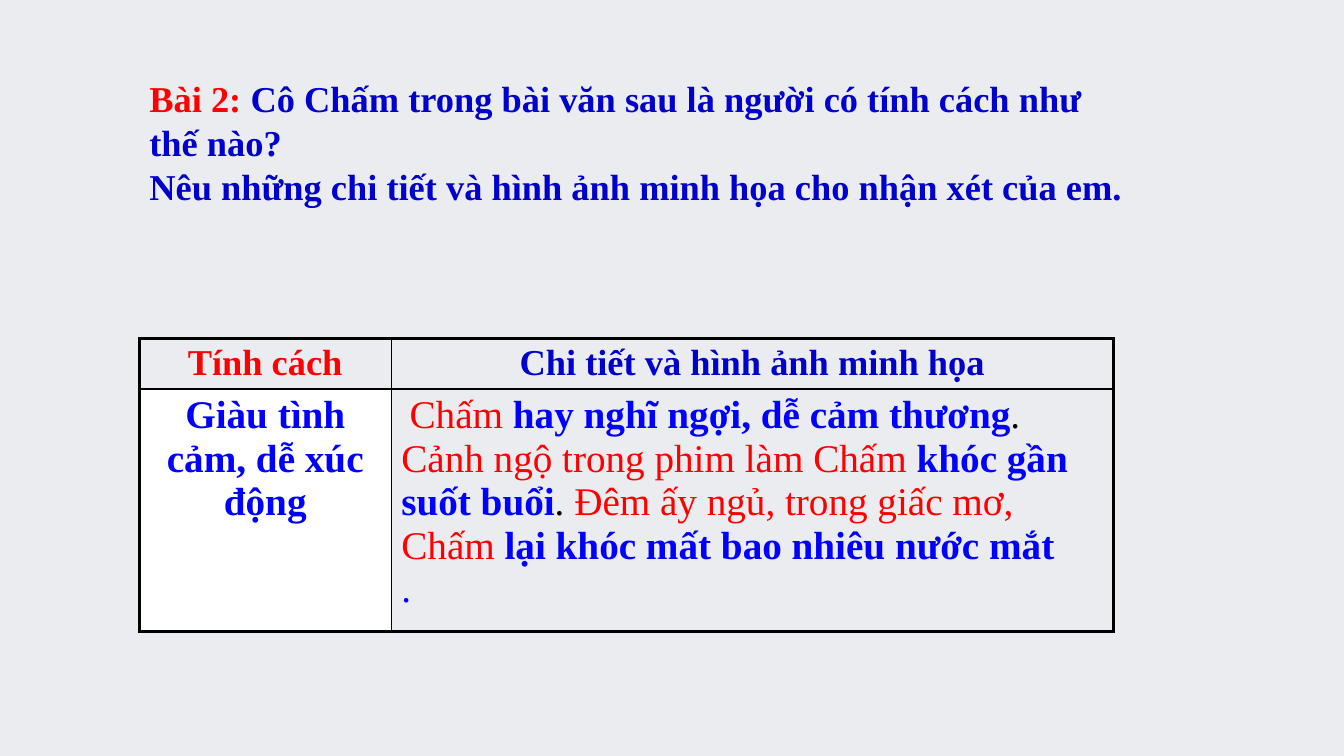
import pptx
import pptx.dml.color
import pptx.enum.text
import pptx.oxml
import pptx.oxml.ns
import pptx.util
from pptx.util import Cm

COLORS = {
    "background": "EBECF0",
    "white": "FFFFFF",
    "black": "000000",
    "red": "FF0000",
    "navy": "0000CC",
    "blue": "0000FF",
}
ALIGN = pptx.enum.text.PP_ALIGN
THICK, THIN = 2.25, 1


def write_runs(para, size, runs):
    """Add (text, color name, bold) runs to a paragraph."""
    for text, color, bold in runs:
        span = para.add_run()
        span.text = text
        formats = {"name": "Times New Roman", "size": pptx.util.Pt(size), "bold": bold}
        for name, value in formats.items():
            setattr(span.font, name, value)
        span.font.color.rgb = pptx.dml.color.RGBColor.from_string(COLORS[color])


def add_border(cell, side, width):
    """Draw one black edge of a cell; side is L, R, T or B."""
    line = pptx.oxml.parse_xml(
        f'<a:ln{side} {pptx.oxml.ns.nsdecls("a")} w="{pptx.util.Pt(width)}">'
        f'<a:solidFill><a:srgbClr val="{COLORS["black"]}"/></a:solidFill></a:ln{side}>'
    )
    cell._tc.get_or_add_tcPr().append(line)


deck = pptx.Presentation()
deck.slide_width, deck.slide_height = Cm(33.87), Cm(19.05)
page = deck.slides.add_slide(deck.slide_layouts[5])
page.background.fill.solid()
page.background.fill.fore_color.rgb = pptx.dml.color.RGBColor.from_string(COLORS["background"])

# Exercise heading
title = page.shapes.title
place = {"left": Cm(3.51), "top": Cm(1.8), "width": Cm(25.3), "height": Cm(3.58)}
for name, value in place.items():
    setattr(title, name, value)
box = title.text_frame
frame_formats = {
    "word_wrap": True,
    "auto_size": pptx.enum.text.MSO_AUTO_SIZE.NONE,
    "vertical_anchor": pptx.enum.text.MSO_ANCHOR.TOP,
}
for name, value in frame_formats.items():
    setattr(box, name, value)
heading = [
    [
        ("Bài 2: ", "red", True),
        ("Cô Chấm trong bài văn sau là người có tính cách như thế nào?", "navy", True),
    ],
    [("Nêu những chi tiết và hình ảnh minh họa cho nhận xét của em.", "navy", True)],
]
for index, runs in enumerate(heading):
    para = box.add_paragraph() if index else box.paragraphs[0]
    para.alignment = ALIGN.LEFT
    write_runs(para, 26, runs)

# Table of character traits and evidence
evidence = [
    ("Chấm ", "red", False),
    ("hay nghĩ ngợi, dễ cảm thương", "blue", True),
    (". ", "black", False),
    ("Cảnh ngộ trong phim làm Chấm ", "red", False),
    ("khóc gần suốt buổi", "blue", True),
    (". ", "black", False),
    ("Đêm ấy ngủ, trong giấc mơ, Chấm ", "red", False),
    ("lại khóc mất bao nhiêu nước mắt", "blue", True),
]
rows = [
    (26, [
        [[("Tính cách", "red", True)]],
        [[("Chi tiết và hình ảnh minh họa", "navy", True)]],
    ]),
    (28, [
        [[("Giàu tình cảm, dễ xúc động", "blue", True)]],
        [evidence, [(".", "blue", False)]],
    ]),
]
table = page.shapes.add_table(2, 2, Cm(3.51), Cm(8.53), Cm(24.56), Cm(7.26)).table
table.first_row = table.horz_banding = False
for column, width in zip(table.columns, (6.35, 18.21)):
    column.width = Cm(width)
for row, height in zip(table.rows, (1.14, 6.12)):
    row.height = Cm(height)

for row_index, (size, cells) in enumerate(rows):
    for column_index, paragraphs in enumerate(cells):
        cell = table.cell(row_index, column_index)
        is_evidence = (row_index, column_index) == (1, 1)
        for index, runs in enumerate(paragraphs):
            para = cell.text_frame.add_paragraph() if index else cell.text_frame.paragraphs[0]
            para.alignment = ALIGN.LEFT if is_evidence else ALIGN.CENTER
            if is_evidence and index == 0:
                para._p.get_or_add_pPr().set("indent", str(Cm(0.21)))
            write_runs(para, size, runs)
        outer_edges = {
            "L": column_index == 0,
            "R": column_index == 1,
            "T": row_index == 0,
            "B": row_index == 1,
        }
        for side, is_outer in outer_edges.items():
            add_border(cell, side, THICK if is_outer else THIN)
        if (row_index, column_index) == (1, 0):
            cell.fill.solid()
            cell.fill.fore_color.rgb = pptx.dml.color.RGBColor.from_string(COLORS["white"])
        else:
            cell.fill.background()

deck.save("out.pptx")
